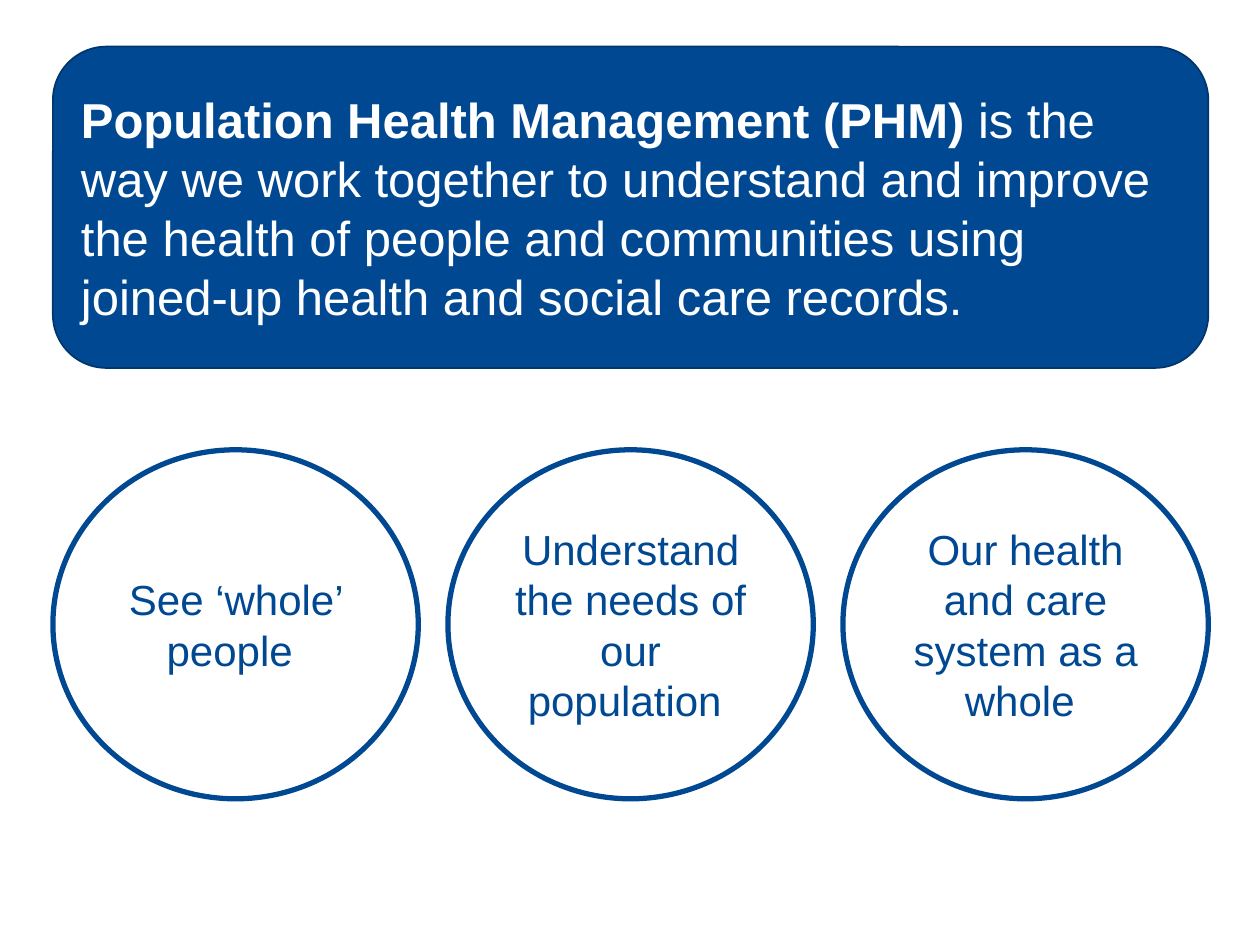
"""Build the Population Health Management slide."""
import pptx
import pptx.util
import pptx.dml.color
import pptx.enum.shapes
import pptx.enum.text

Inches = pptx.util.Inches
Pt = pptx.util.Pt
RGBColor = pptx.dml.color.RGBColor
SHAPE = pptx.enum.shapes.MSO_SHAPE
ALIGN = pptx.enum.text.PP_ALIGN
MIDDLE = pptx.enum.text.MSO_ANCHOR.MIDDLE

BLUE = RGBColor(0x00, 0x49, 0x92)
NAVY = RGBColor(0x00, 0x36, 0x6C)
WHITE = RGBColor(0xFF, 0xFF, 0xFF)

LEFT, WIDTH = 0.42, 9.17
ROUND = 2.9
GOALS = [
    "See ‘whole’ people ",
    "Understand the needs of our population ",
    "Our health and care system as a whole ",
]
STEP = (WIDTH - ROUND) / (len(GOALS) - 1)


def add_shape(kind, box, fill, edge, weight, align):
    shape = slide.shapes.add_shape(kind, *[Inches(side) for side in box])
    shape.shadow.inherit = False
    shape.fill.solid()
    shape.fill.fore_color.rgb = fill
    shape.line.color.rgb = edge
    shape.line.width = Pt(weight)
    frame = shape.text_frame
    frame.word_wrap = True
    frame.vertical_anchor = MIDDLE
    para = frame.paragraphs[0]
    para.alignment = align
    return para


def add_run(para, text, color, form):
    run = para.add_run()
    run.text = text
    run.font.color.rgb = color
    for name, value in form.items():
        setattr(run.font, name, value)


deck = pptx.Presentation()
deck.slide_width = Inches(10)
deck.slide_height = Inches(7.5)
slide = deck.slides.add_slide(deck.slide_layouts[6])

small = {"name": "Arial", "size": Pt(24)}
for index, goal in enumerate(GOALS):
    box = (LEFT + index * STEP, 3.57, ROUND, 2.77)
    para = add_shape(SHAPE.OVAL, box, WHITE, BLUE, 3, ALIGN.CENTER)
    add_run(para, goal, BLUE, small)

large = {"name": "Arial", "size": Pt(28)}
box = (LEFT, 0.37, WIDTH, 2.55)
para = add_shape(SHAPE.ROUNDED_RECTANGLE, box, BLUE, NAVY, 1, ALIGN.LEFT)
add_run(para, "Population Health Management (PHM) ", WHITE, {**large, "bold": True})
add_run(
    para,
    "is the way we work together to understand and improve the health of "
    "people and communities using joined-up health and social care records.",
    WHITE,
    {**large, "bold": False},
)

deck.save("out.pptx")
